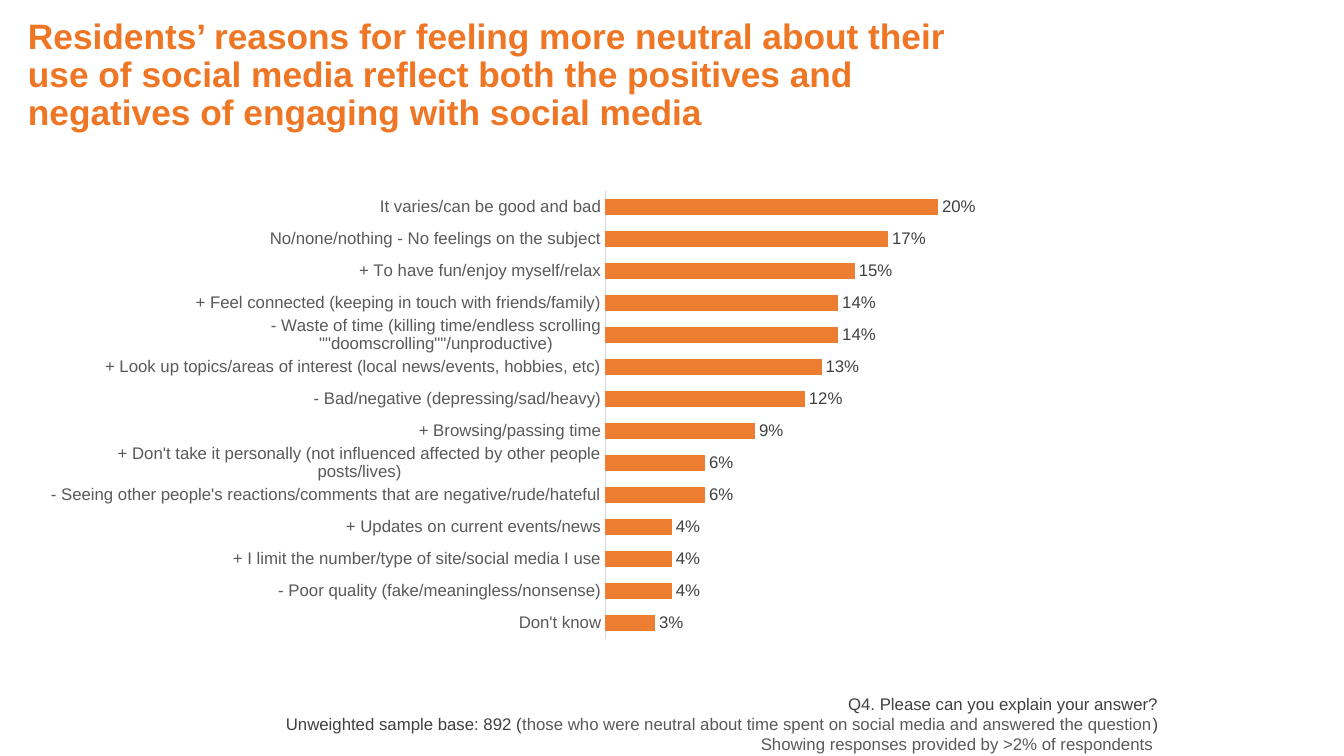
import pptx
import pptx.chart.data
import pptx.dml.color
import pptx.enum.chart
import pptx.enum.text
import pptx.oxml
import pptx.oxml.ns
import pptx.util

PX = pptx.util.Inches(1) // 96
FONT = "Arial"
COLORS = {"title": "EE7624", "bar": "ED7D31", "dark": "404040",
          "grey": "595959", "axis": "D9D9D9", "black": "000000"}

TITLE = ("Residents’ reasons for feeling more neutral about their use of social media "
         "reflect both the positives and negatives of engaging with social media")
REASONS = [
    ("It varies/can be good and bad", 0.20),
    ("No/none/nothing - No feelings on the subject", 0.17),
    ("+ To have fun/enjoy myself/relax", 0.15),
    ("+ Feel connected (keeping in touch with friends/family)", 0.14),
    ('- Waste of time (killing time/endless scrolling ""doomscrolling""/unproductive)', 0.14),
    ("+ Look up topics/areas of interest (local news/events, hobbies, etc)", 0.13),
    ("- Bad/negative (depressing/sad/heavy)", 0.12),
    ("+ Browsing/passing time", 0.09),
    ("+ Don't take it personally (not influenced affected by other people posts/lives)", 0.06),
    ("- Seeing other people's reactions/comments that are negative/rude/hateful", 0.06),
    ("+ Updates on current events/news", 0.04),
    ("+ I limit the number/type of site/social media I use", 0.04),
    ("- Poor quality (fake/meaningless/nonsense)", 0.04),
    ("Don't know", 0.03),
]
FOOTNOTE = [
    [("Q4. Please can you explain your answer?", "dark")],
    [("Unweighted sample base: 892 (", "dark"),
     ("those who were neutral about time spent on social media and answered the question", "grey"),
     (")", "dark")],
    [("Showing responses provided by >2% of respondents ", "grey")],
]
PLOT_AREA = {"x": 0.567, "y": 0.041, "w": 0.418, "h": 0.917}


def emu(box):
    """Turn a box in px into EMU lengths."""
    return [v * PX for v in box]


def rgb(name):
    """Look up a named colour."""
    return pptx.dml.color.RGBColor.from_string(COLORS[name])


def assign(obj, values):
    """Set each attribute of obj from a dict."""
    for key, value in values.items():
        setattr(obj, key, value)


def style(font, size, color, bold=False):
    """Format a font."""
    assign(font, {"name": FONT, "size": pptx.util.Pt(size), "bold": bold})
    font.color.rgb = rgb(color)


def add_title(s, box):
    """Place and format the title placeholder."""
    sp = s.shapes.title
    assign(sp, dict(zip(("left", "top", "width", "height"), emu(box))))
    tf = sp.text_frame
    assign(tf, {"word_wrap": True, "auto_size": pptx.enum.text.MSO_AUTO_SIZE.NONE,
                "vertical_anchor": pptx.enum.text.MSO_ANCHOR.MIDDLE})
    p = tf.paragraphs[0]
    assign(p, {"alignment": pptx.enum.text.PP_ALIGN.LEFT, "line_spacing": 0.9})
    r = p.add_run()
    r.text = TITLE
    style(r.font, 25.2, "title", True)


def add_footnote(s, box):
    """Write the right-aligned question and sample base."""
    tf = s.shapes.add_textbox(*emu(box)).text_frame
    assign(tf, {"word_wrap": True, "vertical_anchor": pptx.enum.text.MSO_ANCHOR.MIDDLE,
                "auto_size": pptx.enum.text.MSO_AUTO_SIZE.SHAPE_TO_FIT_TEXT,
                "margin_left": 0, "margin_top": 0, "margin_right": 0, "margin_bottom": 0})
    for i, runs in enumerate(FOOTNOTE):
        p = tf.add_paragraph() if i else tf.paragraphs[0]
        p.alignment = pptx.enum.text.PP_ALIGN.RIGHT
        for text, color in runs:
            r = p.add_run()
            r.text = text
            style(r.font, 12, color)


def set_plot_area(chart):
    """Fix the inner plot area as fractions of the chart."""
    area = chart.element.find(".//" + pptx.oxml.ns.qn("c:plotArea"))
    for old in area.findall(pptx.oxml.ns.qn("c:layout")):
        area.remove(old)
    modes = "".join(f'<c:{k}Mode val="edge"/>' for k in "xy")
    sizes = "".join(f'<c:{k} val="{v}"/>' for k, v in PLOT_AREA.items())
    area.insert(0, pptx.oxml.parse_xml(
        f'<c:layout {pptx.oxml.ns.nsdecls("c")}><c:manualLayout>'
        f'<c:layoutTarget val="inner"/>{modes}{sizes}</c:manualLayout></c:layout>'))


def add_reasons_chart(s, box):
    """Draw the bar chart of reasons."""
    data = pptx.chart.data.CategoryChartData(number_format="0%")
    names, shares = zip(*REASONS)
    data.categories = names
    data.add_series("Series 1", shares)
    kind = pptx.enum.chart.XL_CHART_TYPE.BAR_CLUSTERED
    chart = s.shapes.add_chart(kind, *emu(box), data).chart
    assign(chart, {"has_legend": False, "has_title": False})
    style(chart.font, 11, "black")
    set_plot_area(chart)

    plot = chart.plots[0]
    assign(plot, {"gap_width": 100, "vary_by_categories": False, "has_data_labels": True})
    fill = plot.series[0].format.fill
    fill.solid()
    fill.fore_color.rgb = rgb("bar")
    labels = plot.data_labels
    assign(labels, {"show_value": True, "number_format": "0%", "number_format_is_linked": False,
                    "position": pptx.enum.chart.XL_LABEL_POSITION.OUTSIDE_END})
    style(labels.font, 12, "dark")

    none = pptx.enum.chart.XL_TICK_MARK.NONE
    axis = chart.category_axis
    assign(axis, {"reverse_order": True, "major_tick_mark": none, "minor_tick_mark": none,
                  "has_major_gridlines": False})
    style(axis.tick_labels.font, 12, "grey")
    axis.format.line.width = pptx.util.Pt(0.75)
    axis.format.line.color.rgb = rgb("axis")
    assign(chart.value_axis, {"visible": False, "has_major_gridlines": False,
                              "minimum_scale": 0, "maximum_scale": 0.25})


def main():
    """Build and save the slide."""
    prs = pptx.Presentation()
    assign(prs, {"slide_width": 1280 * PX, "slide_height": 720 * PX})
    s = prs.slides.add_slide(prs.slide_layouts[5])
    add_title(s, (17, 41, 929, 63))
    add_footnote(s, (200, 660, 903, 59))
    add_reasons_chart(s, (39, 163, 948, 465))
    prs.save("out.pptx")


if __name__ == "__main__":
    main()
